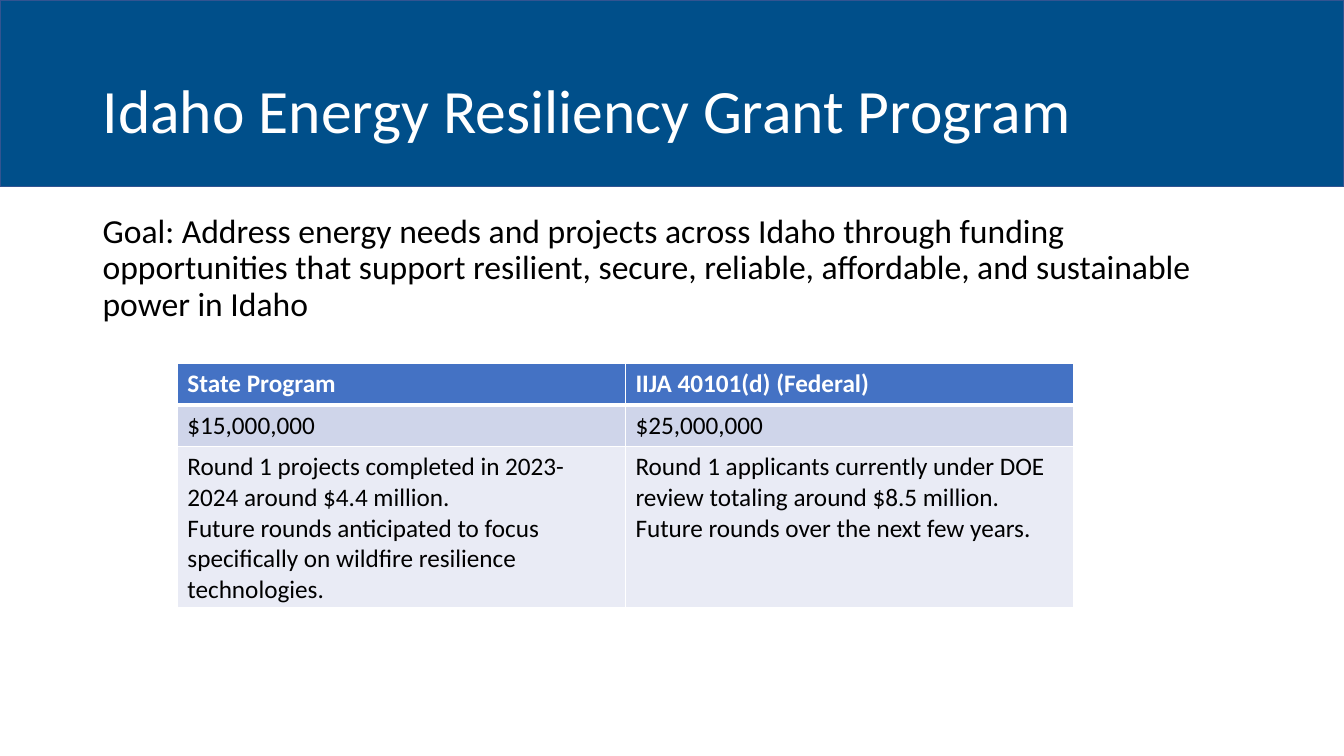
from lxml import etree
from pptx import Presentation
from pptx.dml.color import RGBColor
from pptx.enum.shapes import MSO_SHAPE
from pptx.enum.text import MSO_ANCHOR
from pptx.oxml.ns import qn
from pptx.util import Emu, Inches, Pt

RECTANGLE = MSO_SHAPE.RECTANGLE
TOP, MIDDLE = MSO_ANCHOR.TOP, MSO_ANCHOR.MIDDLE
FONT = "Calibri"
WHITE, BLACK = "FFFFFF", "000000"
ROW_FILLS = ["4472C4", "CFD5EA", "E9EBF5"]
ROW_HEIGHTS = [0.41, 0.41, 1.59]
MARGIN, TEXT_WIDTH = 0.92, 11.5

TITLE = "Idaho Energy Resiliency Grant Program"
GOAL = ("Goal: Address energy needs and projects across Idaho through funding "
        "opportunities that support resilient, secure, reliable, affordable, "
        "and sustainable power in Idaho")
PROGRAMS = [
    ["State Program", "IIJA 40101(d) (Federal)"],
    ["$15,000,000", "$25,000,000"],
    ["Round 1 projects completed in 2023-2024 around $4.4 million.\n"
     "Future rounds anticipated to focus specifically on wildfire resilience technologies.",
     "Round 1 applicants currently under DOE review totaling around $8.5 million. "
     "Future rounds over the next few years."],
]


def rgb(value):
    return RGBColor.from_string(value)


def set_font(p, size, color, bold=False):
    p.font.name = FONT
    p.font.size = Pt(size)
    p.font.bold = bold
    p.font.color.rgb = rgb(color)


def add_text(slide, box, text, size, color, anchor):
    tf = slide.shapes.add_textbox(*map(Inches, box)).text_frame
    tf.word_wrap = True
    tf.vertical_anchor = anchor
    p = tf.paragraphs[0]
    p.text = text
    p.line_spacing = 0.9
    set_font(p, size, color)


def add_header(slide, width, height):
    band = slide.shapes.add_shape(RECTANGLE, 0, 0, width, Inches(height))
    band.shadow.inherit = False
    band.fill.solid()
    band.fill.fore_color.rgb = rgb("004F8A")
    band.line.color.rgb = rgb("325491")
    band.line.width = Pt(1)
    add_text(slide, (MARGIN, 0.4, TEXT_WIDTH, height - 0.4), TITLE, 44, WHITE, MIDDLE)


def set_borders(cell, widths):
    """Draw white cell borders; widths maps each side (L, R, T, B) to points."""
    tc_pr = cell._tc.get_or_add_tcPr()
    for side, width in widths.items():
        ln = etree.SubElement(tc_pr, qn(f"a:ln{side}"), w=str(Pt(width)))
        fill = etree.SubElement(ln, qn("a:solidFill"))
        etree.SubElement(fill, qn("a:srgbClr"), val=WHITE)


def add_program_table(slide, box):
    shape = slide.shapes.add_table(len(PROGRAMS), len(PROGRAMS[0]), *map(Inches, box))
    table = shape.table
    for r, texts in enumerate(PROGRAMS):
        table.rows[r].height = Inches(ROW_HEIGHTS[r])
        is_header = r == 0
        for c, text in enumerate(texts):
            cell = table.cell(r, c)
            set_borders(cell, {"L": 1, "R": 1, "T": 3 if r == 1 else 1,
                               "B": 3 if is_header else 1})
            cell.fill.solid()
            cell.fill.fore_color.rgb = rgb(ROW_FILLS[r])
            cell.text = text
            for p in cell.text_frame.paragraphs:
                set_font(p, 18, WHITE if is_header else BLACK, is_header)


def main():
    prs = Presentation()
    prs.slide_width, prs.slide_height = Emu(12192000), Inches(7.5)
    slide = prs.slides.add_slide(prs.slide_layouts[6])
    add_header(slide, prs.slide_width, 1.85)
    add_text(slide, (MARGIN, 2.08, TEXT_WIDTH, 4.76), GOAL, 24, BLACK, TOP)
    add_program_table(slide, (1.76, 3.61, 8.89, sum(ROW_HEIGHTS)))
    prs.save("out.pptx")


if __name__ == "__main__":
    main()
